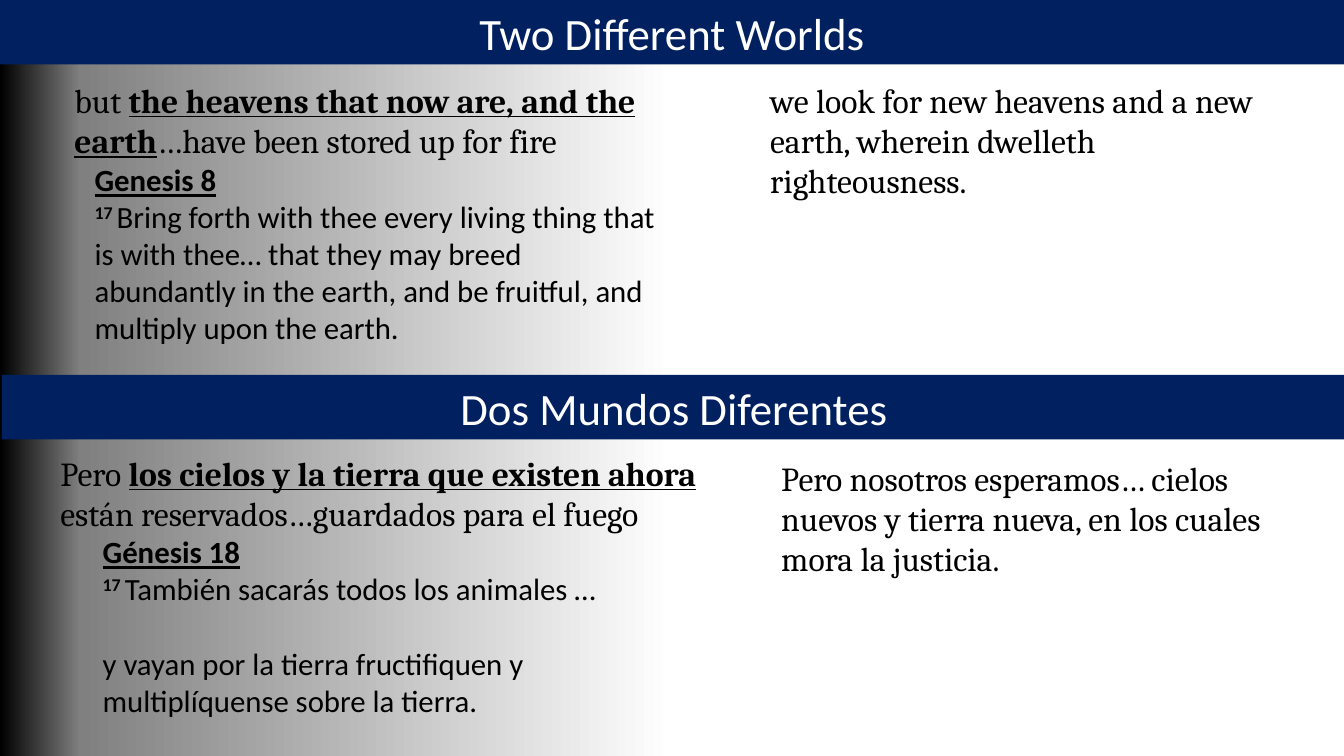
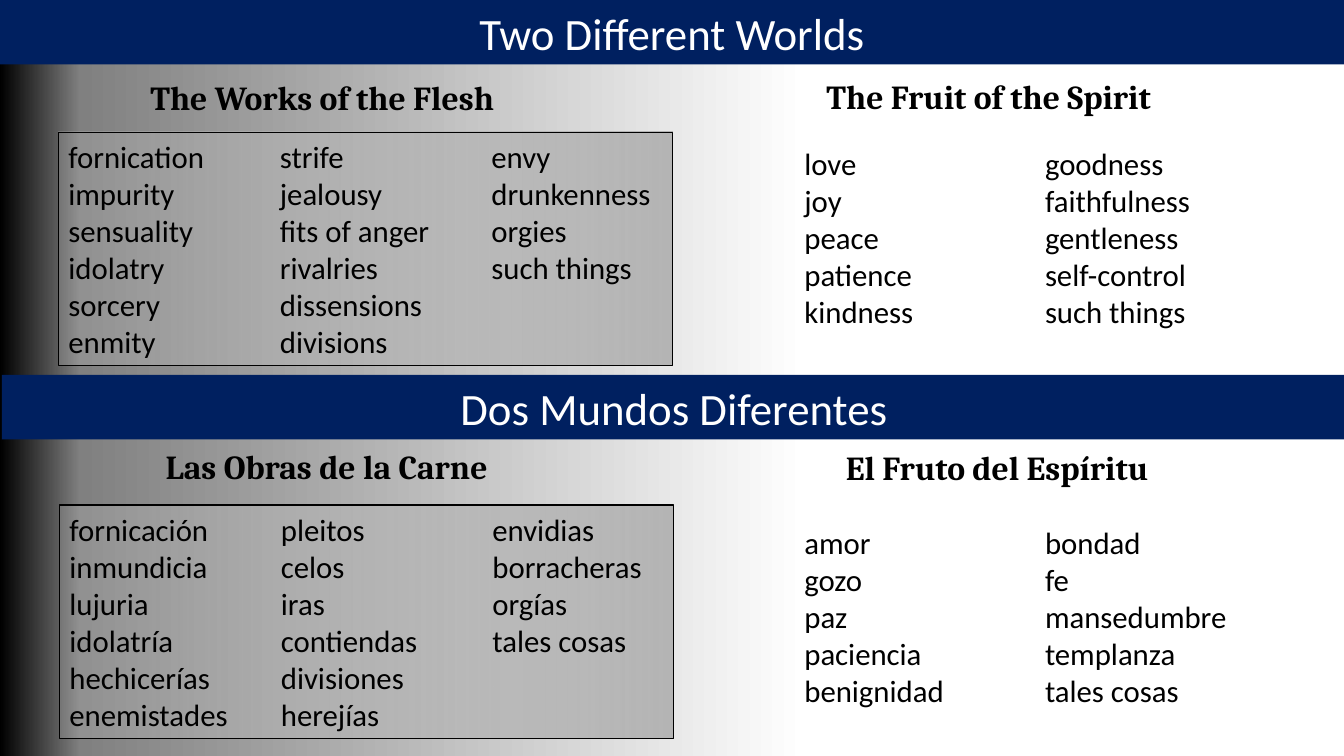
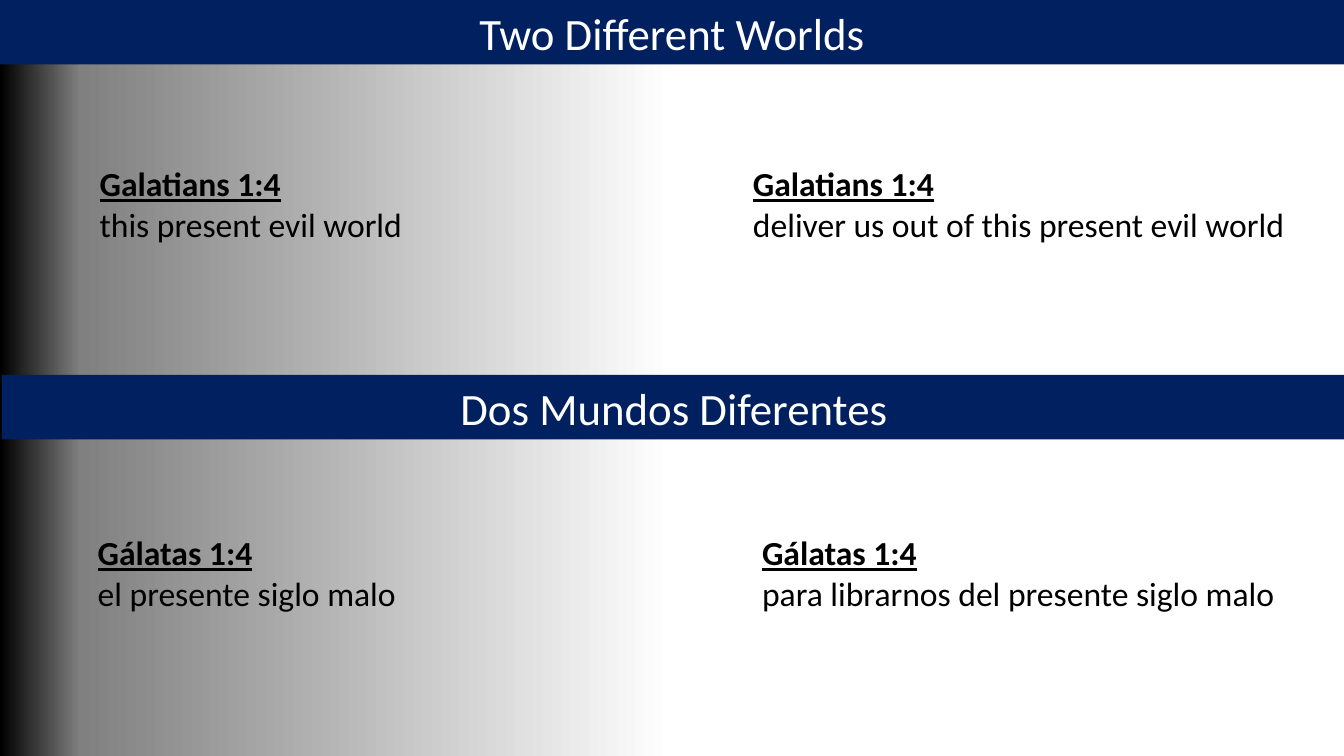
from lxml import etree
from pptx import Presentation
from pptx.dml.color import RGBColor
from pptx.enum.shapes import MSO_SHAPE
from pptx.enum.text import MSO_AUTO_SIZE, PP_ALIGN
from pptx.oxml.ns import qn
from pptx.util import Inches, Pt

NAVY = RGBColor(0x00, 0x20, 0x60)
WHITE = RGBColor(0xFF, 0xFF, 0xFF)
BLACK = RGBColor(0x00, 0x00, 0x00)
GREY = RGBColor(0x80, 0x80, 0x80)
PALE = RGBColor(0xF2, 0xF2, 0xF2)
SANS, SERIF = "Calibri", "Cambria"
LEFT, MID = PP_ALIGN.LEFT, PP_ALIGN.CENTER


def shade(fill, root, stops):
    fill.gradient()
    fill.gradient_angle = 0
    ramp = root.find(".//" + qn("a:gsLst"))
    for old in list(ramp):
        ramp.remove(old)
    for place, color, alpha in stops:
        stop = etree.SubElement(ramp, qn("a:gs"), pos=str(place * 1000))
        tint = etree.SubElement(stop, qn("a:srgbClr"), val=str(color))
        if alpha < 100:
            etree.SubElement(tint, qn("a:alpha"), val=str(alpha * 1000))


def write(box, paras, size, font, color=BLACK, align=LEFT, cols=1):
    frame = box.text_frame
    frame.word_wrap = True
    frame.auto_size = MSO_AUTO_SIZE.SHAPE_TO_FIT_TEXT
    if cols > 1:
        body = box.element.find(".//" + qn("a:bodyPr"))
        body.set("numCol", str(cols))
        body.set("spcCol", str(Inches(0.4)))
    for i, parts in enumerate(paras):
        para = frame.add_paragraph() if i else frame.paragraphs[0]
        para.alignment = align
        for words, marks in parts:
            run = para.add_run()
            run.text = words
            run.font.size = Pt(size)
            run.font.name = font
            run.font.color.rgb = color
            run.font.bold = "b" in marks
            run.font.underline = "u" in marks
            if "s" in marks:
                run._r.get_or_add_rPr().set("baseline", "30000")
            if "g" in marks:
                para.space_before = Pt(26.8)


deck = Presentation()
deck.slide_width = Inches(13.33)
deck.slide_height = Inches(7.5)

bands = [(0, 0, "Two Different Worlds"), (0.02, 3.72, "Dos Mundos Diferentes")]
pages = []
for white in (50, 60, 50):
    page = deck.slides.add_slide(deck.slide_layouts[6])
    shade(page.background.fill, page.element,
          [(0, BLACK, 100), (6, GREY, 100), (white, WHITE, 100)])
    for x, y, title in bands:
        band = page.shapes.add_shape(
            MSO_SHAPE.RECTANGLE, Inches(x), Inches(y), Inches(13.33), Inches(0.64))
        band.shadow.inherit = False
        band.fill.solid()
        band.fill.fore_color.rgb = NAVY
        band.line.fill.background()
        write(band, [[(title, "")]], 32, SANS, WHITE, MID)
    pages.append(page)
worlds, fruits, rescue = pages

verses = [
    (0.84, 1.55, 5.78, 1.95, 22, SANS, [
        [("Genesis 8", "bu")],
        [("17 ", "bs"), ("Bring forth with thee every living thing that is with thee… "
                         "that they may breed abundantly in the earth, and be fruitful, "
                         "and multiply upon the earth.", "")]]),
    (0.92, 5.24, 5.22, 1.95, 22, SANS, [
        [("Génesis 18", "bu")],
        [("17 ", "bs"), ("También sacarás todos los animales …", "")],
        [("y vayan por la tierra fructifiquen y multiplíquense sobre la tierra.", "g")]]),
    (0.64, 0.74, 5.99, 0.91, 24, SERIF, [
        [("but ", ""), ("the heavens that now are, and the earth", "bu"),
         ("…have been stored up for fire", "")]]),
    (0.5, 4.44, 6.67, 0.91, 24, SERIF, [
        [("Pero ", ""), ("los cielos y la tierra que existen ahora", "bu"),
         (" están reservados…guardados para el fuego", "")]]),
    (7.65, 4.49, 5.22, 1.31, 24, SERIF, [
        [("Pero nosotros esperamos… cielos nuevos y tierra nueva, "
          "en los cuales mora la justicia.", "")]]),
    (7.54, 0.74, 5.01, 1.31, 24, SERIF, [
        [("we look for new heavens and a new earth, "
          "wherein dwelleth righteousness.", "")]]),
]
for x, y, w, h, size, font, paras in verses:
    box = worlds.shapes.add_textbox(Inches(x), Inches(y), Inches(w), Inches(h))
    write(box, paras, size, font)

heads = [
    (0.44, 0.71, 5.51, MID, "The Works of the Flesh"),
    (7.05, 0.7, 5.51, MID, "The Fruit of the Spirit"),
    (1.21, 4.37, 4.06, MID, "Las Obras de la Carne"),
    (8.29, 4.38, 3.31, LEFT, "El Fruto del Espíritu"),
]
for x, y, w, align, head in heads:
    box = fruits.shapes.add_textbox(Inches(x), Inches(y), Inches(w), Inches(0.5))
    write(box, [[(head, "b")]], 24, SERIF, align=align)

works = [
    (0.58, 1.31, ["fornication", "impurity", "sensuality", "idolatry", "sorcery", "enmity",
                  "strife", "jealousy", "fits of anger", "rivalries", "dissensions",
                  "divisions", "envy", "drunkenness", "orgies", "such things"]),
    (0.59, 5.01, ["fornicación", "inmundicia", "lujuria", "idolatría", "hechicerías",
                  "enemistades", "pleitos", "celos", "iras", "contiendas", "divisiones",
                  "herejías", "envidias", "borracheras", "orgías", "tales cosas"]),
]
for x, y, items in works:
    box = fruits.shapes.add_shape(
        MSO_SHAPE.RECTANGLE, Inches(x), Inches(y), Inches(6.09), Inches(2.32))
    box.shadow.inherit = False
    shade(box.fill, box.element, [(0, PALE, 15), (100, GREY, 50)])
    box.line.color.rgb = BLACK
    box.line.width = Pt(0.75)
    write(box, [[(item, "")] for item in items], 22, SANS, cols=3)

gifts = [
    (1.39, ["love", "joy", "peace", "patience", "kindness", "goodness", "faithfulness",
            "gentleness", "self-control", "such things"]),
    (5.15, ["amor", "gozo", "paz", "paciencia", "benignidad", "bondad", "fe",
            "mansedumbre", "templanza", "tales cosas"]),
]
for y, items in gifts:
    box = fruits.shapes.add_textbox(Inches(7.88), Inches(y), Inches(4.57), Inches(1.95))
    write(box, [[(item, "")] for item in items], 22, SANS, cols=2)

quotes = [
    (0.89, 1.57, 4.57, "Galatians 1:4", "this present evil world"),
    (7.37, 1.57, 5.7, "Galatians 1:4", "deliver us out of this present evil world"),
    (0.87, 5.23, 4.6, "Gálatas 1:4", "el presente siglo malo"),
    (7.46, 5.23, 5.54, "Gálatas 1:4", "para librarnos del presente siglo malo"),
]
for x, y, w, verse, words in quotes:
    box = rescue.shapes.add_textbox(Inches(x), Inches(y), Inches(w), Inches(0.91))
    write(box, [[(verse, "bu")], [(words, "")]], 24, SANS)

deck.save("out.pptx")
